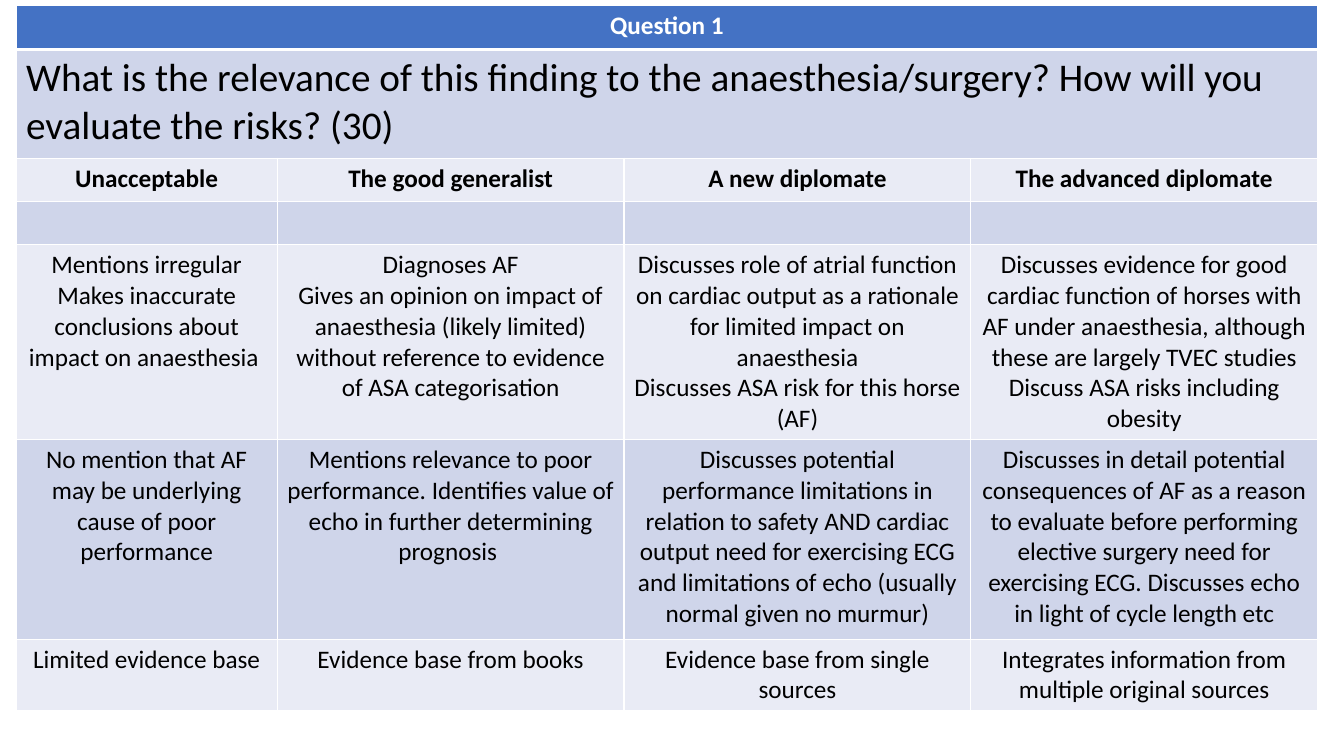
import pptx
import pptx.dml.color
import pptx.enum.text
import pptx.oxml
import pptx.oxml.ns
import pptx.util

Inches = pptx.util.Inches
ALIGN = pptx.enum.text.PP_ALIGN

QUESTION = ("What is the relevance of this finding to the anaesthesia/surgery? "
            "How will you evaluate the risks? (30)")
LEVELS = ["Unacceptable", "The good generalist", "A new diplomate", "The advanced diplomate"]
CRITERIA = [
    [""] * 4,
    ["Mentions irregular\nMakes inaccurate conclusions about impact on anaesthesia ",
     "Diagnoses AF\nGives an opinion on impact of anaesthesia (likely limited) "
     "without reference to evidence of ASA categorisation",
     "Discusses role of atrial function on cardiac output as a rationale for limited "
     "impact on anaesthesia\nDiscusses ASA risk for this horse (AF)",
     "Discusses evidence for good cardiac function of horses with AF under anaesthesia, "
     "although these are largely TVEC studies\nDiscuss ASA risks including obesity"],
    ["No mention that AF may be underlying cause of poor performance",
     "Mentions relevance to poor performance. Identifies value of echo in further "
     "determining prognosis ",
     "Discusses potential performance limitations in relation to safety AND cardiac output "
     "need for exercising ECG and limitations of echo (usually normal given no murmur)",
     "Discusses in detail potential consequences of AF as a reason to evaluate before "
     "performing elective surgery need for exercising ECG. Discusses echo in light of "
     "cycle length etc"],
    ["Limited evidence base", "Evidence base from books", "Evidence base from single sources",
     "Integrates information from multiple original sources"],
]
COL_WIDTHS = [2.59, 3.44, 3.44, 3.44]
ROW_HEIGHTS = [0.44, 1.08, 0.43, 0.43, 1.93, 1.98, 0.71]


def rgb(value):
    return pptx.dml.color.RGBColor.from_string(value)


class RubricSlide:
    font = "Calibri"
    header, dark_band, light_band = "4472C4", "CFD5EA", "E9EBF5"
    white, black = "FFFFFF", "000000"

    def __init__(self, prs):
        self.s = prs.slides.add_slide(prs.slide_layouts[6])

    def add_grid(self, left, top, widths, heights):
        frame = self.s.shapes.add_table(len(heights), len(widths), Inches(left), Inches(top),
                                        Inches(sum(widths)), Inches(sum(heights)))
        table = frame.table
        for column, width in zip(table.columns, widths):
            column.width = Inches(width)
        for row, height in zip(table.rows, heights):
            row.height = Inches(height)
        return table

    def set_borders(self, cell, widths):
        """Draw white borders; widths are points for left, right, top and bottom."""
        tc_pr = cell._tc.get_or_add_tcPr()
        for side, width in zip("LRTB", widths):
            tc_pr.append(pptx.oxml.parse_xml(
                f'<a:ln{side} {pptx.oxml.ns.nsdecls("a")} w="{pptx.util.Pt(width)}">'
                f'<a:solidFill><a:srgbClr val="{self.white}"/></a:solidFill></a:ln{side}>'))

    def style_cell(self, cell, row):
        top = 3 if row == 1 else 1
        bottom = 3 if row == 0 else 1
        self.set_borders(cell, (1, 1, top, bottom))
        cell.fill.solid()
        band = self.dark_band if row % 2 else self.light_band
        cell.fill.fore_color.rgb = rgb(self.header if row == 0 else band)

    def write_cell(self, cell, text, size=18, bold=False, color=black, align=ALIGN.CENTER):
        tf = cell.text_frame
        tf.text = text
        for p in tf.paragraphs:
            p.alignment = align
            p.font.size = pptx.util.Pt(size)
            for r in p.runs:
                r.font.name = self.font
                r.font.size = pptx.util.Pt(size)
                r.font.bold = bold
                r.font.color.rgb = rgb(color)


def main():
    prs = pptx.Presentation()
    prs.slide_width, prs.slide_height = Inches(13.33), Inches(7.5)
    rubric = RubricSlide(prs)
    table = rubric.add_grid(0.16, 0.05, COL_WIDTHS, ROW_HEIGHTS)
    for row in range(len(ROW_HEIGHTS)):
        for col in range(len(COL_WIDTHS)):
            rubric.style_cell(table.cell(row, col), row)
    for row in (0, 1):
        table.cell(row, 0).merge(table.cell(row, len(COL_WIDTHS) - 1))

    rubric.write_cell(table.cell(0, 0), "Question 1", bold=True, color=rubric.white)
    rubric.write_cell(table.cell(1, 0), QUESTION, size=28, align=ALIGN.LEFT)
    for row, texts in enumerate([LEVELS] + CRITERIA, start=2):
        for col, text in enumerate(texts):
            rubric.write_cell(table.cell(row, col), text, bold=row == 2)
    prs.save("out.pptx")


if __name__ == "__main__":
    main()
